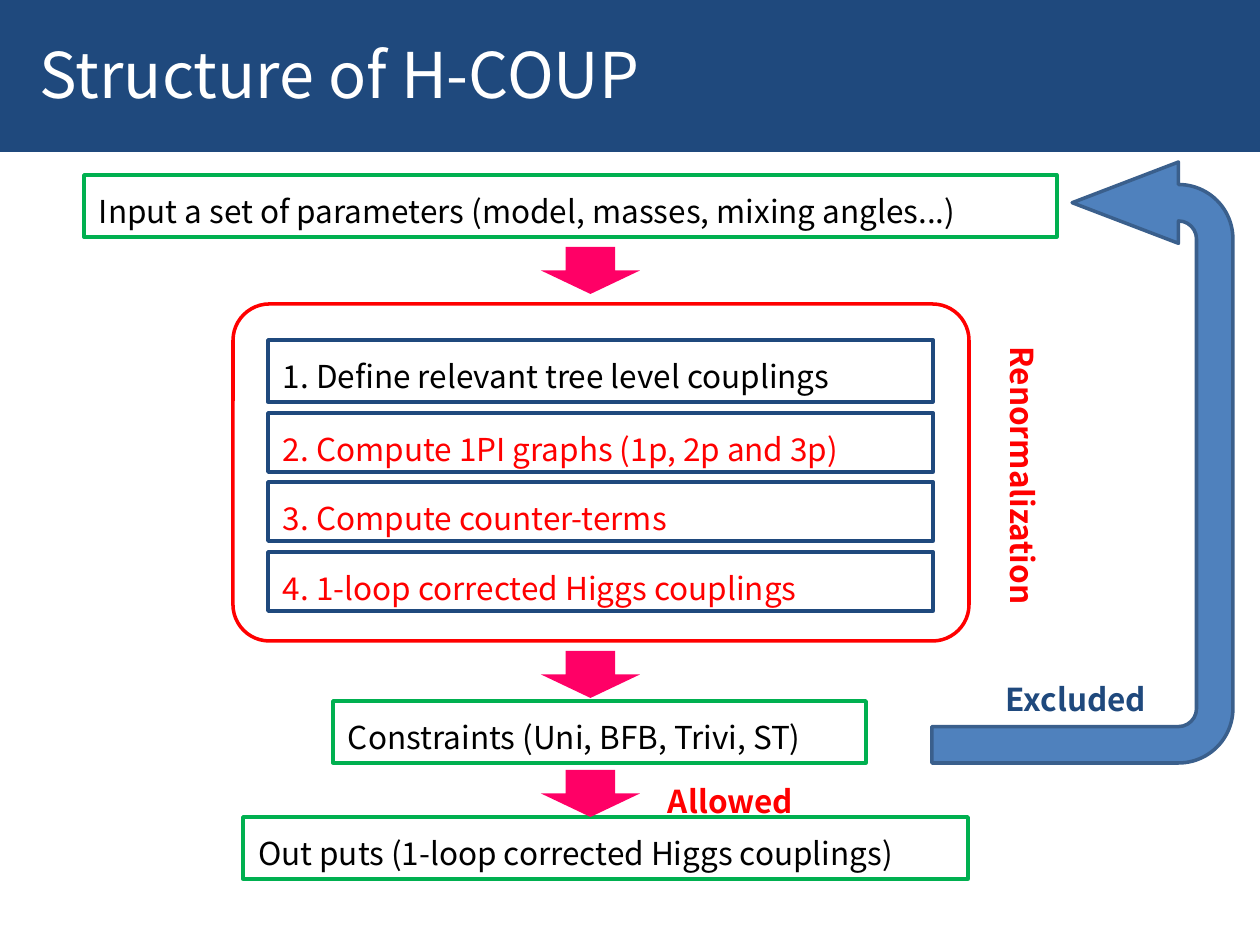
import dataclasses

import pptx
import pptx.dml.color
import pptx.enum.shapes
import pptx.enum.text
import pptx.util

KIND = pptx.enum.shapes.MSO_SHAPE
ALIGN = pptx.enum.text.PP_ALIGN
ANCHOR = pptx.enum.text.MSO_ANCHOR
FIT = pptx.enum.text.MSO_AUTO_SIZE


@dataclasses.dataclass(frozen=True)
class Theme:
    font: str = "Noto Sans CJK JP"
    head: int = 36
    body: int = 18
    edge: int = 2
    navy: str = "1F497D"
    white: str = "FFFFFF"
    black: str = "000000"
    red: str = "FF0000"
    green: str = "00B050"
    pink: str = "FF0066"
    blue: str = "4F81BD"
    steel: str = "3A5F8C"


def px(count):
    return pptx.util.Emu(round(count * 914400 / 126))


def color(code):
    return pptx.dml.color.RGBColor.from_string(code)


def apply(target, values):
    for name, value in values.items():
        setattr(target, name, value)


class Board:
    def __init__(self, deck, theme):
        self.theme = theme
        self.slide = deck.slides.add_slide(deck.slide_layouts[6])

    def shape(self, kind, area, fill=None, line=None, adjust=()):
        item = self.slide.shapes.add_shape(kind, *map(px, area))
        item.shadow.inherit = False
        for paint, code in ((item.fill, fill), (item.line.fill, line)):
            if code:
                paint.solid()
                paint.fore_color.rgb = color(code)
            else:
                paint.background()
        if line:
            item.line.width = pptx.util.Pt(self.theme.edge)
        for index, value in enumerate(adjust):
            item.adjustments[index] = value
        return item

    def letter(self, item, text, ink, size, frame, para, bold=False):
        apply(item.text_frame, frame)
        line = item.text_frame.paragraphs[0]
        line.text = text
        apply(line, para)
        apply(line.font, {"name": self.theme.font, "size": pptx.util.Pt(size), "bold": bold})
        line.font.color.rgb = color(ink)

    def title(self, text, area):
        item = self.shape(KIND.RECTANGLE, area, fill=self.theme.navy)
        frame = {"margin_left": px(40), "vertical_anchor": ANCHOR.MIDDLE}
        self.letter(item, text, self.theme.white, self.theme.head, frame, {"alignment": ALIGN.LEFT})

    def box(self, text, area, line, ink):
        item = self.shape(KIND.RECTANGLE, area, line=line)
        frame = {
            "margin_left": px(15), "margin_right": px(15),
            "margin_top": px(6), "margin_bottom": px(6),
            "word_wrap": True, "vertical_anchor": ANCHOR.TOP,
            "auto_size": FIT.SHAPE_TO_FIT_TEXT,
        }
        para = {"alignment": ALIGN.LEFT, "line_spacing": 1.3}
        self.letter(item, text, ink, self.theme.body, frame, para)

    def label(self, text, area, ink, turn=0):
        item = self.slide.shapes.add_textbox(*map(px, area))
        item.rotation = turn
        frame = {"word_wrap": False, "auto_size": FIT.SHAPE_TO_FIT_TEXT}
        para = {"alignment": ALIGN.CENTER, "line_spacing": 1.5}
        self.letter(item, text, ink, self.theme.body, frame, para, bold=True)

    def arrow(self, top):
        self.shape(KIND.DOWN_ARROW, (541, top, 99, 47), fill=self.theme.pink)

    def loop(self, area):
        adjust = (0.121, 0.135, 0.353, 0.265, 0.534)
        item = self.shape(KIND.U_TURN_ARROW, area, self.theme.blue, self.theme.steel, adjust)
        item.rotation = 90
        item.element.spPr.xfrm.set("flipH", "1")


def main():
    theme = Theme()
    deck = pptx.Presentation()
    apply(deck, {"slide_width": px(1260), "slide_height": px(945)})
    board = Board(deck, theme)
    board.title("Structure of H-COUP", (0, -5, 1260, 157))

    board.box("1. Define relevant tree level couplings", (268, 340, 665, 62), theme.navy, theme.black)
    tasks = (
        "2. Compute 1PI graphs (1p, 2p and 3p)",
        "3. Compute counter-terms",
        "4. 1-loop corrected Higgs couplings",
    )
    for index, text in enumerate(tasks):
        board.box(text, (268, 413 + index * 139 // 2, 665, 59), theme.navy, theme.red)
    board.shape(KIND.ROUNDED_RECTANGLE, (233, 304, 736, 337), line=theme.red, adjust=(0.108,))

    stages = (
        ("Input a set of parameters (model, masses, mixing angles...)", 84, 175, 973),
        ("Out puts (1-loop corrected Higgs couplings)", 243, 817, 725),
        ("Constraints (Uni, BFB, Trivi, ST)", 333, 701, 533),
    )
    for text, left, top, width in stages:
        board.box(text, (left, top, width, 62), theme.green, theme.black)
    for top in (247, 651, 770):
        board.arrow(top)

    board.loop((782, 312, 601, 301))
    board.label("Excluded", (987, 655, 178, 71), theme.navy)
    board.label("Allowed", (651, 757, 159, 66), theme.red)
    board.label("Renormalization", (881, 440, 302, 71), theme.red, 90)
    deck.save("out.pptx")


if __name__ == "__main__":
    main()
